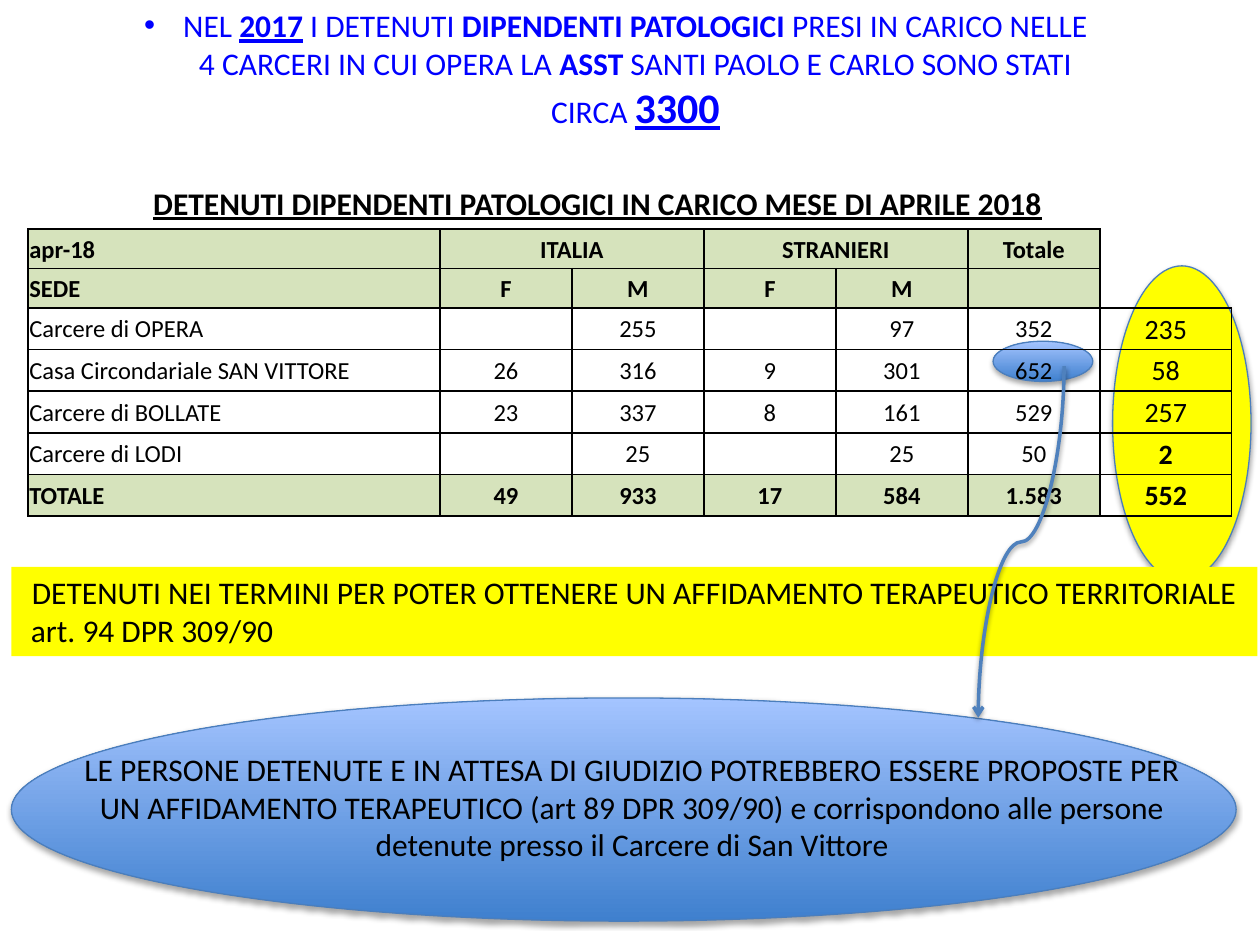
from lxml.etree import SubElement
from pptx import Presentation
from pptx.dml.color import RGBColor
from pptx.enum.shapes import MSO_CONNECTOR as Link, MSO_SHAPE as Shape
from pptx.enum.text import MSO_ANCHOR as Anchor, PP_ALIGN as Align
from pptx.oxml.ns import qn
from pptx.util import Cm, Pt

BLACK = RGBColor(0x00, 0x00, 0x00)
BLUE = RGBColor(0x00, 0x00, 0xFF)
YELLOW = RGBColor(0xFF, 0xFF, 0x00)
GREEN = RGBColor(0xD6, 0xE3, 0xBC)
DEEP = RGBColor(0x3F, 0x80, 0xCE)
LIGHT = RGBColor(0xA4, 0xC4, 0xFF)
OUTLINE = RGBColor(0x4B, 0x7E, 0xBC)
ARROW = RGBColor(0x4F, 0x81, 0xBD)

INTRO = [
    ("NEL ", ""), ("2017", "bu"), (" I DETENUTI ", ""),
    ("DIPENDENTI PATOLOGICI ", "b"),
    ("PRESI IN CARICO NELLE 4 CARCERI IN CUI OPERA LA ", ""), ("ASST", "b"),
    (" SANTI PAOLO E CARLO SONO STATI CIRCA ", ""), ("3300", "bu", 24),
]
HEADING = [("DETENUTI DIPENDENTI PATOLOGICI IN CARICO MESE DI APRILE 2018", "bu")]
TERMS = [
    [("DETENUTI NEI TERMINI PER POTER OTTENERE UN AFFIDAMENTO TERAPEUTICO TERRITORIALE", "")],
    [(" art. 94 DPR 309/90", "")],
]
PROPOSAL = [
    [("LE PERSONE DETENUTE E IN ATTESA DI GIUDIZIO POTREBBERO ESSERE PROPOSTE PER", "")],
    [("UN AFFIDAMENTO TERAPEUTICO (art 89 DPR 309/90) e corrispondono alle persone "
      "detenute presso il Carcere di San Vittore", "")],
]
ROWS = [
    ["apr-18", "ITALIA", "", "STRANIERI", "", "Totale", ""],
    ["SEDE", "F", "M", "F", "M", "", ""],
    ["Carcere di OPERA", "", "255", "", "97", "352", "235"],
    ["Casa Circondariale SAN VITTORE", "26", "316", "9", "301", "652", "58"],
    ["Carcere di BOLLATE", "23", "337", "8", "161", "529", "257"],
    ["Carcere di LODI", "", "25", "", "25", "50", "2"],
    ["TOTALE", "49", "933", "17", "584", "1.583", "552"],
]
WIDTHS = [8.31] + [2.66] * 6
HEIGHTS = [0.76] * 2 + [0.84] * 5
HEADER_ROWS = (0, 1)
TOTAL_ROW = len(ROWS) - 1
LAST_COLUMN = len(WIDTHS) - 1
ELLIPSES = [
    ((0.23, 14.07, 24.69, 4.5), None),
    ((20.02, 6.88, 2.01, 0.81), None),
    ((22.43, 5.36, 2.79, 6.35), YELLOW),
]


def write(para, spans, size=18, color=BLACK, align=Align.LEFT):
    para.alignment = align
    for text, style, *own_size in spans:
        span = para.add_run()
        span.text = text
        font = span.font
        font.name = "Calibri"
        font.size = Pt(own_size[0] if own_size else size)
        font.bold = "b" in style
        font.underline = "u" in style
        font.color.rgb = color


def add_text(page, place, paragraphs, aligns, color=BLACK, wrap=True):
    box = page.shapes.add_textbox(*map(Cm, place))
    box.text_frame.word_wrap = wrap
    for index, (spans, align) in enumerate(zip(paragraphs, aligns)):
        frame = box.text_frame
        para = frame.add_paragraph() if index else frame.paragraphs[0]
        write(para, spans, color=color, align=align)
    return box


def add_bullet(para):
    properties = para._p.get_or_add_pPr()
    properties.set("marL", str(Cm(0.79)))
    properties.set("indent", str(-Cm(0.79)))
    SubElement(properties, qn("a:buFont"), typeface="Arial")
    SubElement(properties, qn("a:buChar"), char="•")


def add_shadow(properties, opacity, distance):
    effects = SubElement(properties, qn("a:effectLst"))
    shadow = SubElement(effects, qn("a:outerShdw"), blurRad=str(Pt(3.1)),
                        dist=str(Pt(distance)), dir="5400000", rotWithShape="0")
    tone = SubElement(shadow, qn("a:srgbClr"), val=str(BLACK))
    SubElement(tone, qn("a:alpha"), val=str(opacity * 1000))


def add_ellipse(page, place, color):
    ellipse = page.shapes.add_shape(Shape.OVAL, *map(Cm, place))
    if color is None:
        ellipse.fill.gradient()
        ellipse.fill.gradient_angle = 90
        for stop, tone in zip(ellipse.fill.gradient_stops, (DEEP, LIGHT)):
            stop.color.rgb = tone
    else:
        ellipse.fill.solid()
        ellipse.fill.fore_color.rgb = color
    ellipse.line.color.rgb = OUTLINE
    ellipse.line.width = Pt(0.75)
    add_shadow(ellipse._element.spPr, 35, 1.8)


def set_borders(cell, sides):
    properties = cell._tc.get_or_add_tcPr()
    for side in "LRTB":
        line = SubElement(properties, qn(f"a:ln{side}"), w=str(Pt(1)))
        if side in sides:
            fill = SubElement(line, qn("a:solidFill"))
            SubElement(fill, qn("a:srgbClr"), val=str(BLACK))
        else:
            SubElement(line, qn("a:noFill"))


def fill_cell(cell, text, row, column):
    header, last = row in HEADER_ROWS, column == LAST_COLUMN
    sides = "LRTB"
    if header and last:
        sides = "LB" if row == HEADER_ROWS[-1] else "L"
    set_borders(cell, sides)
    cell.margin_left = cell.margin_right = cell.margin_top = Cm(0.03)
    cell.margin_bottom = 0
    cell.vertical_anchor = Anchor.MIDDLE
    if (header or row == TOTAL_ROW) and not last:
        cell.fill.solid()
        cell.fill.fore_color.rgb = GREEN
    else:
        cell.fill.background()
    bold = header or row == TOTAL_ROW or (last and row == TOTAL_ROW - 1)
    write(cell.text_frame.paragraphs[0], [(text, "b" if bold else "")],
          size=16 if last and not header else 14,
          align=Align.CENTER if column else Align.LEFT)


def add_counts(page):
    frame = page.shapes.add_table(len(ROWS), len(WIDTHS), Cm(0.56), Cm(4.62),
                                  Cm(sum(WIDTHS)), Cm(sum(HEIGHTS)))
    table = frame.table
    table.first_row = table.horz_banding = False
    for column, width in zip(table.columns, WIDTHS):
        column.width = Cm(width)
    for row, height in zip(table.rows, HEIGHTS):
        row.height = Cm(height)
    for row, texts in enumerate(ROWS):
        for column, text in enumerate(texts):
            fill_cell(table.cell(row, column), text, row, column)
    for column in (1, 3):
        table.cell(0, column).merge(table.cell(0, column + 1))


def add_arrow(page):
    left, top, width, height = 17.04, 10.06, 7.09, 1.73
    arrow = page.shapes.add_connector(Link.CURVE, Cm(left), Cm(top),
                                      Cm(left + width), Cm(top + height))
    arrow.line.color.rgb = ARROW
    arrow.line.width = Pt(2)
    properties = arrow._element.spPr
    properties.find(qn("a:xfrm")).set("rot", "5400000")
    SubElement(properties.find(qn("a:ln")), qn("a:tailEnd"), type="arrow")
    add_shadow(properties, 38, 1.6)


def main():
    deck = Presentation()
    deck.slide_width, deck.slide_height = Cm(25.4), Cm(19.05)
    page = deck.slides.add_slide(deck.slide_layouts[6])
    for place, color in ELLIPSES:
        add_ellipse(page, place, color)
    intro = add_text(page, (2.51, 0, 19.81, 2.82), [INTRO], [Align.CENTER], color=BLUE)
    add_bullet(intro.text_frame.paragraphs[0])
    add_text(page, (2.84, 3.58, 19.58, 1.02), [HEADING], [Align.LEFT])
    terms = add_text(page, (0.23, 11.43, 25.12, 1.8), TERMS,
                     [Align.CENTER, Align.LEFT], wrap=False)
    terms.fill.solid()
    terms.fill.fore_color.rgb = YELLOW
    add_text(page, (1.19, 14.99, 23.11, 2.57), PROPOSAL, [Align.CENTER] * 2)
    add_counts(page)
    add_arrow(page)
    deck.save("out.pptx")


if __name__ == "__main__":
    main()
